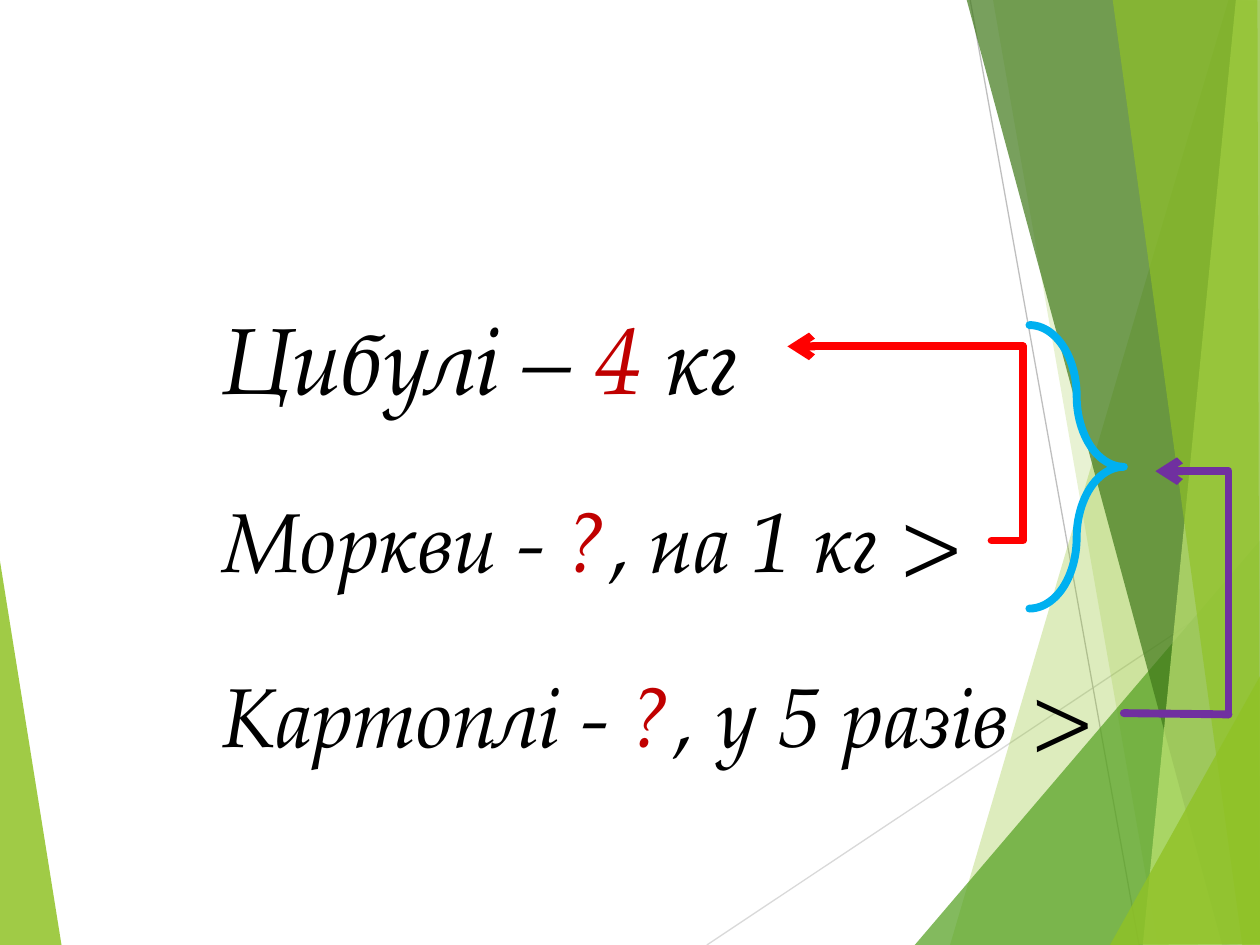
from lxml import etree
from pptx import Presentation
from pptx.dml.color import RGBColor
from pptx.enum import shapes, text
from pptx.oxml.ns import qn
from pptx.util import Inches, Pt

FONT = "TeX Gyre Pagella"
COLORS = {
    "text": "000000", "number": "C00000", "red": "FF0000", "purple": "7030A0",
    "blue": "00B0F0", "green": "90C226", "mid": "54A021", "dark": "3F7819",
    "light": "C0E474", "rule": "D9D9D9", "rule2": "BFBFBF",
}

# Problem lines: box, size, wrapping, (text, colour) runs
LINES = [
    ((1.67, 2.33, 4.5, 1.01), 54, True,
     [("Цибулі – ", "text"), ("4", "number"), (" кг", "text")]),
    ((1.67, 3.83, 6.21, 0.91), 48, False,
     [("Моркви - ", "text"), ("?", "number"), (", на 1 кг >", "text")]),
    ((1.67, 5.22, 7.2, 0.91), 48, False,
     [("Картоплі - ", "text"), ("?", "number"), (", у 5 разів >", "text")]),
]

# Arrows: start, end, x of the upright part, colour
ARROWS = [
    ((7.87, 4.29), (6.25, 2.75), 8.12, "red"),
    ((9.75, 5.67), (9.17, 3.74), 9.75, "purple"),
]
PURPLE_STEM = ((8.92, 5.66), (9.75, 5.67))

# Background: corner points, colour, opacity in percent
LEFT_FACET = ([(-0.01, 4.39), (0.49, 7.51), (-0.01, 7.5)], "green", 85)
RULES = [((5.61, 7.5), (10.01, 4.57), "rule"), ((7.7, 0), (9.04, 7.5), "rule2")]
RIGHT_FACETS = [
    ([(9.75, 0), (7.54, 7.5), (10.02, 7.51), (10.01, 0.01)], "green", 30),
    ([(7.88, -0.01), (9.19, 7.5), (10.01, 7.5), (10.01, -0.01)], "green", 20),
    ([(7.26, 7.5), (10, 4.29), (10.01, 7.5)], "mid", 72),
    ([(7.67, -0.01), (9.7, 7.5), (10.01, 7.49), (10.01, -0.01)], "dark", 70),
    ([(9.81, -0.01), (9.07, 7.5), (10.01, 7.5), (10, -0.01)], "light", 70),
    ([(8.83, -0.01), (9.86, 7.5), (10, 7.5), (9.98, -0.01)], "green", 65),
    ([(8.81, 7.5), (10.01, 5.35), (10.01, 7.49)], "green", 80),
]


def rgb(name):
    return RGBColor.from_string(COLORS[name])


def add_facet(s, points, color, opacity):
    start, *rest = [(Inches(x), Inches(y)) for x, y in points]
    fb = s.shapes.build_freeform(*start)
    fb.add_line_segments(rest, close=True)
    sp = fb.convert_to_shape()
    sp.shadow.inherit = False
    sp.line.fill.background()
    sp.fill.solid()
    sp.fill.fore_color.rgb = rgb(color)
    clr = sp._element.spPr.find(".//" + qn("a:srgbClr"))
    etree.SubElement(clr, qn("a:alpha"), val=str(opacity * 1000))


def style_line(sp, color, width, cap="flat"):
    sp.line.color.rgb = rgb(color)
    sp.line.width = Pt(width)
    sp._element.spPr.find(qn("a:ln")).set("cap", cap)


def add_line(s, start, end, color, width, kind="STRAIGHT", cap="flat"):
    ends = [Inches(v) for v in (*start, *end)]
    cxn = s.shapes.add_connector(shapes.MSO_CONNECTOR[kind], *ends)
    style_line(cxn, color, width, cap)
    etree.SubElement(cxn._element.spPr, qn("a:effectLst"))
    return cxn


def add_arrow(s, start, end, bend_x, color):
    cxn = add_line(s, start, end, color, 4.5, "ELBOW", "rnd")
    # The bend is a share of the horizontal distance from start to end
    adj = round((bend_x - start[0]) / (end[0] - start[0]) * 100000)
    av = cxn._element.spPr.find(qn("a:prstGeom")).get_or_add_avLst()
    etree.SubElement(av, qn("a:gd"), name="adj1", fmla=f"val {adj}")
    ln = cxn._element.spPr.find(qn("a:ln"))
    etree.SubElement(ln, qn("a:round"))
    etree.SubElement(ln, qn("a:tailEnd"), type="arrow")


def add_text(s, runs, box, size, wrap):
    tf = s.shapes.add_textbox(*map(Inches, box)).text_frame
    tf.word_wrap = wrap
    tf.auto_size = text.MSO_AUTO_SIZE.SHAPE_TO_FIT_TEXT
    p = tf.paragraphs[0]
    for content, color in runs:
        r = p.add_run()
        r.text = content
        r.font.name, r.font.size, r.font.italic = FONT, Pt(size), True
        r.font.color.rgb = rgb(color)


def main():
    prs = Presentation()
    prs.slide_width, prs.slide_height = Inches(10), Inches(7.5)
    s = prs.slides.add_slide(prs.slide_layouts[6])

    # Background facets
    add_facet(s, *LEFT_FACET)
    for start, end, color in RULES:
        add_line(s, start, end, color, 0.75)
    for facet in RIGHT_FACETS:
        add_facet(s, *facet)

    # Problem text
    for box, size, wrap, runs in LINES:
        add_text(s, runs, box=box, size=size, wrap=wrap)

    # Relations between the lines
    for arrow in ARROWS:
        add_arrow(s, *arrow)
    add_line(s, *PURPLE_STEM, "purple", 4.5, cap="rnd")
    brace = s.shapes.add_shape(shapes.MSO_SHAPE.RIGHT_BRACE,
                               *map(Inches, (8.17, 2.58, 0.75, 2.25)))
    brace.shadow.inherit = False
    brace.fill.background()
    brace.adjustments[0] = 0.99
    style_line(brace, "blue", 4.5, "rnd")

    prs.save("out.pptx")


if __name__ == "__main__":
    main()
